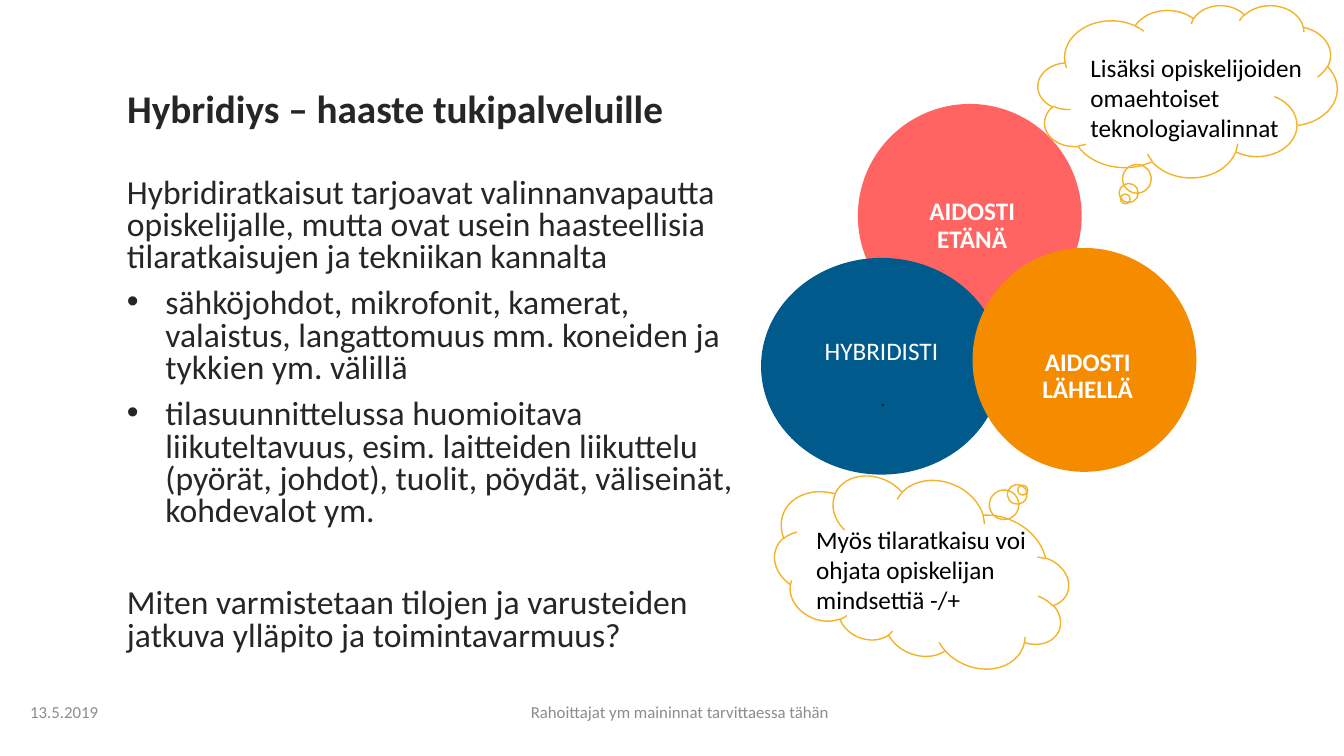
import pptx
import pptx.util
import pptx.dml.color
import pptx.enum.shapes
import pptx.enum.text
from pptx.oxml.xmlchemy import OxmlElement

Cm, Pt = pptx.util.Cm, pptx.util.Pt
SHAPE = pptx.enum.shapes.MSO_SHAPE
ALIGN = pptx.enum.text.PP_ALIGN
ANCHOR = pptx.enum.text.MSO_ANCHOR
NO_FIT = pptx.enum.text.MSO_AUTO_SIZE.NONE

DARK, GREY, WHITE, BLACK, GOLD = "262626", "8C8C8C", "FFFFFF", "000000", "F3B329"
INDENT = 0.97

TITLE = ("Hybridiys – haaste tukipalveluille", (2.95, 2.13, 14.96, 1.6))
BODY_PLACE = (2.95, 4.37, 16.23, 12.42)
BODY = [
    ("Hybridiratkaisut tarjoavat valinnanvapautta opiskelijalle, mutta ovat usein "
     "haasteellisia tilaratkaisujen ja tekniikan kannalta", False, 0),
    ("sähköjohdot, mikrofonit, kamerat, valaistus, langattomuus mm. koneiden ja "
     "tykkien ym. välillä", True, 10),
    ("tilasuunnittelussa huomioitava liikuteltavuus, esim. laitteiden liikuttelu "
     "(pyörät, johdot), tuolit, pöydät, väliseinät, kohdevalot ym.", True, 10),
    ("Miten varmistetaan tilojen ja varusteiden jatkuva ylläpito ja toimintavarmuus?",
     False, 43),
]
FOOTERS = [
    ("13.5.2019", (0.51, 17.42, 7.62, 1.02), ALIGN.LEFT),
    ("Rahoittajat ym maininnat tarvittaessa tähän", (9.4, 17.42, 15.47, 1.02), ALIGN.CENTER),
]
CIRCLES = [
    ("", (21.62, 2.62, 5.64, 5.64), "FF5452", 90),
    ("HYBRIDISTI", (19.18, 6.5, 6.07, 5.46), "005A8C", 100),
    ("", (24.51, 6.25, 5.64, 5.64), "F58C00", 100),
]
LABELS = [
    (".", (19.86, 9.45, 4.78, 3.15), {"size": 16, "color": DARK}),
    ("AIDOSTI ETÄNÄ", (22.25, 4.72, 4.5, 2.03), {"size": 18, "color": WHITE, "bold": True}),
    ("AIDOSTI LÄHELLÄ", (24.87, 8.51, 5.08, 1.37), {"size": 18, "color": WHITE, "bold": True}),
]
CLOUDS = [
    ("Myös tilaratkaisu voi ohjata opiskelijan mindsettiä -/+",
     (19.48, 12.09, 7.54, 4.47), 202.6, (20.32, 13.08, 6.05, 2.57)),
    ("Lisäksi opiskelijoiden omaehtoiset teknologiavalinnat",
     (26.16, 0.13, 7.54, 4.34), 0, (27.23, 1.19, 6.48, 2.57)),
]


def rgb(value):
    return pptx.dml.color.RGBColor.from_string(value)


def lengths(place):
    return [Cm(value) for value in place]


def apply(target, values):
    for name, value in values.items():
        setattr(target, name, value)


def write(para, text, size, color, bold=False, **layout):
    apply(para, layout)
    span = para.add_run()
    span.text = text
    apply(span.font, {"name": "Calibri", "size": Pt(size), "bold": bold})
    span.font.color.rgb = rgb(color)


def add_box(page, place, **frame):
    box = page.shapes.add_textbox(*lengths(place))
    apply(box.text_frame, {"word_wrap": True, "auto_size": NO_FIT, **frame})
    return box.text_frame


def add_bullet(para):
    properties = para._p.get_or_add_pPr()
    properties.set("marL", str(Cm(INDENT)))
    properties.set("indent", str(-Cm(INDENT)))
    for tag, name, value in (("a:buFont", "typeface", "Arial"), ("a:buChar", "char", "•")):
        element = OxmlElement(tag)
        element.set(name, value)
        properties.append(element)


def add_title(page):
    text, place = TITLE
    title = page.shapes.title
    apply(title, dict(zip(("left", "top", "width", "height"), lengths(place))))
    apply(title.text_frame, {"word_wrap": True, "auto_size": NO_FIT,
                             "vertical_anchor": ANCHOR.TOP})
    write(title.text_frame.paragraphs[0], text, 28, DARK, True,
          alignment=ALIGN.LEFT, line_spacing=0.9)


def add_body(page):
    frame = add_box(page, BODY_PLACE)
    for index, (text, bulleted, before) in enumerate(BODY):
        para = frame.add_paragraph() if index else frame.paragraphs[0]
        if bulleted:
            add_bullet(para)
        write(para, text, 24, DARK, line_spacing=0.8, space_before=Pt(before))


def add_circle(page, text, place, color, opacity):
    circle = page.shapes.add_shape(SHAPE.OVAL, *lengths(place))
    circle.shadow.inherit = False
    circle.fill.solid()
    circle.fill.fore_color.rgb = rgb(color)
    circle.line.fill.background()
    if opacity < 100:
        alpha = OxmlElement("a:alpha")
        alpha.set("val", str(opacity * 1000))
        circle.fill._xPr.find(".//" + pptx.oxml.ns.qn("a:srgbClr")).append(alpha)
    if text:
        apply(circle.text_frame, {"vertical_anchor": ANCHOR.MIDDLE, "margin_bottom": Cm(0.9)})
        write(circle.text_frame.paragraphs[0], text, 18, WHITE, alignment=ALIGN.CENTER)


def add_cloud(page, text, place, rotation, text_place):
    cloud = page.shapes.add_shape(SHAPE.CLOUD_CALLOUT, *lengths(place))
    cloud.shadow.inherit = False
    cloud.rotation = rotation
    cloud.fill.background()
    cloud.line.color.rgb = rgb(GOLD)
    cloud.line.width = Pt(1)
    write(add_box(page, text_place).paragraphs[0], text, 18, BLACK)


def main():
    deck = pptx.Presentation()
    apply(deck, {"slide_width": Cm(33.87), "slide_height": Cm(19.05)})
    page = deck.slides.add_slide(deck.slide_layouts[5])
    for text, place, alignment in FOOTERS:
        frame = add_box(page, place, vertical_anchor=ANCHOR.MIDDLE)
        write(frame.paragraphs[0], text, 12, GREY, alignment=alignment)
    add_title(page)
    add_body(page)
    for circle in CIRCLES:
        add_circle(page, *circle)
    for text, place, style in LABELS:
        frame = add_box(page, place, margin_left=Cm(0.5), margin_right=Cm(0.5))
        write(frame.paragraphs[0], text, **style, alignment=ALIGN.CENTER,
              line_spacing=0.9, space_before=Pt(0))
        frame.margin_top = Cm(0.3)
    for cloud in CLOUDS:
        add_cloud(page, *cloud)
    deck.save("out.pptx")


if __name__ == "__main__":
    main()
